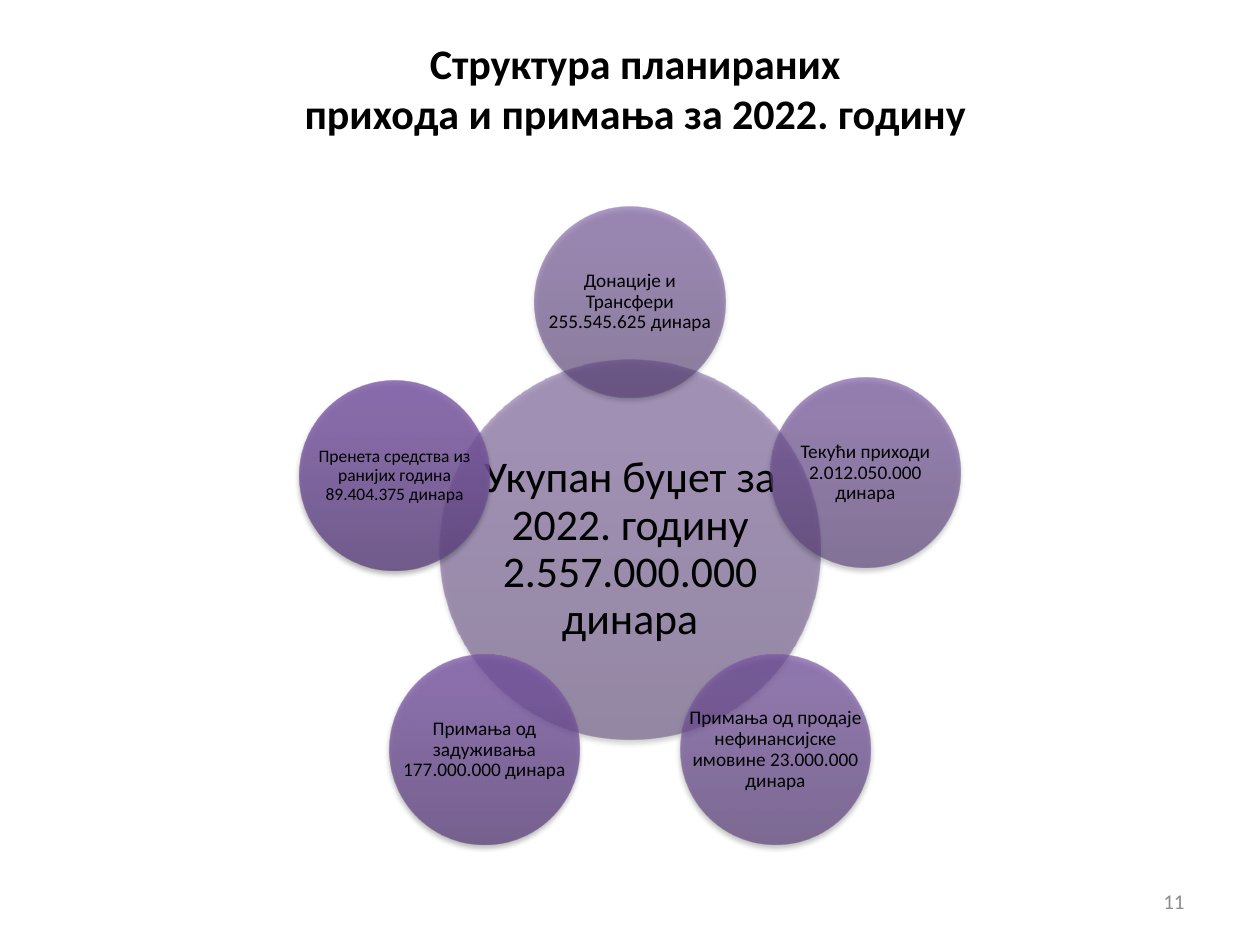
from math import cos, radians, sin

from pptx import Presentation
from pptx.dml.color import RGBColor
from pptx.enum.shapes import MSO_SHAPE as Shape
from pptx.enum.text import MSO_ANCHOR as Anchor, PP_ALIGN as Align
from pptx.oxml import parse_xml
from pptx.oxml.ns import nsdecls
from pptx.util import Pt


def color(hex_text):
    return RGBColor.from_string(hex_text)


def add_text(page, text, left, top, width, height, align, inset=(7.2, 3.6), spacing=1.0, **font):
    box = page.shapes.add_textbox(Pt(left), Pt(top), Pt(width), Pt(height))
    frame = box.text_frame
    side, edge = inset
    layout = {"word_wrap": True, "vertical_anchor": Anchor.MIDDLE,
              "margin_left": Pt(side), "margin_right": Pt(side),
              "margin_top": Pt(edge), "margin_bottom": Pt(edge)}
    for name, value in layout.items():
        setattr(frame, name, value)
    para = frame.paragraphs[0]
    para.text = text
    para.alignment = align
    para.line_spacing = spacing
    for span in para.runs:
        span.font.color.rgb = color(font.get("ink", "000000"))
        for name, value in {"name": "Calibri", "size": Pt(font["size"]),
                            "bold": font.get("bold", False)}.items():
            setattr(span.font, name, value)


deck = Presentation()
deck.slide_width, deck.slide_height = Pt(720), Pt(540)
page = deck.slides.add_slide(deck.slide_layouts[6])

# Title and page number
add_text(page, "Структура планираних\vприхода и примања за 2022. годину",
         39, 19.5, 648, 61, Align.CENTER, size=24, bold=True)
add_text(page, "11", 516, 500.5, 168, 28.8, Align.RIGHT, size=12, ink="8C8C8C")

# The total in the hub; its parts on an orbit, clockwise from the top
hub_x, hub_y, orbit = 360, 314, 141.5
hub_size, part_size = 217.5, 108.75
# text, font size, inset, opacity in percent, downward shift, gradient from bottom to top
total = ("Укупан буџет за 2022. годину 2.557.000.000 динара", 25, 2.2, 50, 0,
         ("563D74", "705097", "704F99"))
parts = [
    ("Донације и\vТрансфери\v255.545.625 динара", 11, 1.4, 56, 0,
     ("583E77", "72519A", "73509C")),
    ("Текући приходи\v2.012.050.000\vдинара", 11, 1.4, 62, 0,
     ("5A407A", "75539E", "7551A0")),
    ("Примања од продаје нефинансијске имовине 23.000.000 динара", 11, 1.4, 68, 0,
     ("5C417C", "7754A1", "7753A4")),
    ("Примања од задуживања 177.000.000 динара", 11, 1.4, 74, 0,
     ("5E427E", "7956A4", "7A55A6")),
    ("Пренета средства из ранијих година 89.404.375 динара", 10, 0.7, 80, 1.5,
     ("5F4580", "7C59A6", "7C58A8")),
]
circles = [(hub_x, hub_y, hub_size, total)]
for index, part in enumerate(parts):
    angle = radians(index * 360 / len(parts) - 90)
    circles.append((hub_x + orbit * cos(angle), hub_y + orbit * sin(angle), part_size, part))

for center_x, center_y, size, (text, font_size, inset, opacity, shift, tones) in circles:
    left, top = center_x - size / 2, center_y - size / 2 + shift
    circle = page.shapes.add_shape(Shape.OVAL, Pt(left), Pt(top), Pt(size), Pt(size))
    circle.line.fill.background()

    # Translucent gradient and soft shadow
    stops = "".join(
        f'<a:gs pos="{place * 1000}"><a:srgbClr val="{tone}">'
        f'<a:alpha val="{opacity * 1000}"/></a:srgbClr></a:gs>'
        for place, tone in zip((0, 80, 100), tones))
    properties = circle.element.spPr
    properties.prstGeom.addnext(parse_xml(
        f'<a:gradFill {nsdecls("a")} rotWithShape="1"><a:gsLst>{stops}</a:gsLst>'
        '<a:lin ang="16200000" scaled="0"/></a:gradFill>'))
    properties.append(parse_xml(
        f'<a:effectLst {nsdecls("a")}><a:outerShdw blurRad="{Pt(3.1)}" dist="{Pt(1.8)}" '
        'dir="5400000" rotWithShape="0"><a:srgbClr val="000000"><a:alpha val="35000"/>'
        '</a:srgbClr></a:outerShdw></a:effectLst>'))

    # Label across the full width of the circle
    add_text(page, text, left, top, size, size, Align.CENTER,
             inset=(inset, inset), spacing=0.9, size=font_size)

deck.save("out.pptx")
